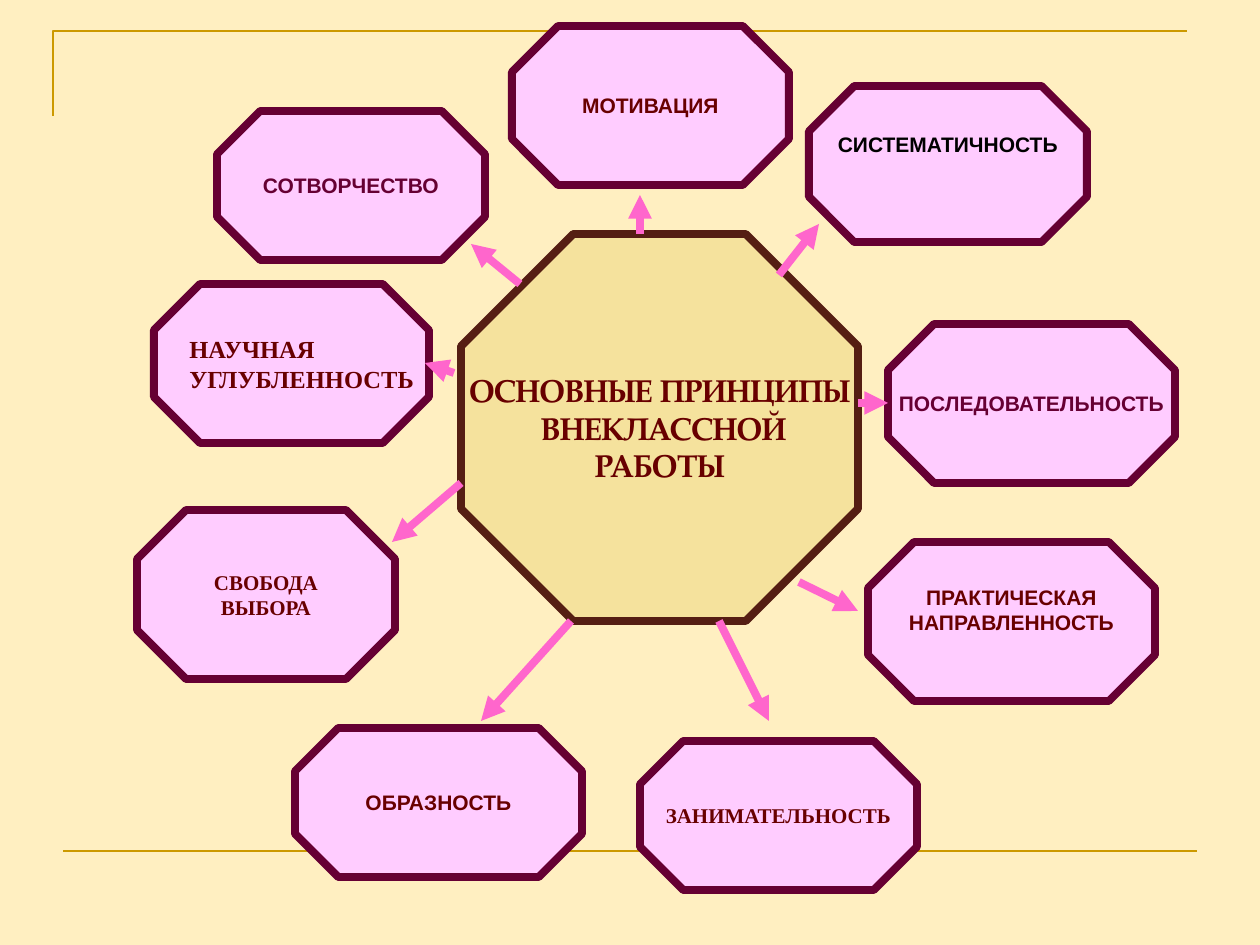
from lxml.etree import SubElement
from pptx import Presentation
from pptx.dml.color import RGBColor
from pptx.enum.shapes import MSO_CONNECTOR, MSO_SHAPE
from pptx.enum.text import MSO_ANCHOR, PP_ALIGN
from pptx.oxml.ns import qn
from pptx.util import Pt

PX = 914400 / 126
SANS, SERIF, TITLE = "Arial", "Times New Roman", "TeX Gyre Pagella"
WINE, PLUM, PINK, GOLD = "680000", "660033", "FF66CC", "CC9900"


def paint(obj, color):
    if hasattr(obj, "solid"):
        obj.solid()
        obj = obj.fore_color
    obj.rgb = RGBColor.from_string(color)


def write(shape, text, font=SANS, size=12, color=WINE, align=PP_ALIGN.CENTER, lift=0):
    frame = shape.text_frame
    frame.word_wrap = False
    frame.vertical_anchor = MSO_ANCHOR.MIDDLE
    frame.margin_bottom = round((6 + lift) * PX)
    for i, line in enumerate(text.split("\n")):
        para = frame.paragraphs[0] if i == 0 else frame.add_paragraph()
        para.alignment = align
        run = para.add_run()
        run.text = line
        run.font.name = font
        run.font.size = Pt(size)
        run.font.bold = True
        paint(run.font.color, color)


deck = Presentation()
deck.slide_width = round(1260 * PX)
deck.slide_height = round(945 * PX)
slide = deck.slides.add_slide(deck.slide_layouts[6])
paint(slide.background.fill, "FFEFC1")
shapes = slide.shapes

build = shapes.build_freeform(53, 116, scale=PX)
build.add_line_segments([(53, 31), (1187, 31)], close=False)
frame = build.convert_to_shape()
frame.shadow.inherit = False
frame.fill.background()
paint(frame.line.fill, GOLD)
frame.line.width = Pt(1.5)

nodes = [
    (461, 234, 397, 387, "ОСНОВНЫЕ ПРИНЦИПЫ\n ВНЕКЛАССНОЙ\nРАБОТЫ", dict(font=TITLE, size=18)),
    (217, 111, 268, 149, "СОТВОРЧЕСТВО", dict(color=PLUM)),
    (154, 284, 275, 159, "НАУЧНАЯ\nУГЛУБЛЕННОСТЬ", dict(font=SERIF, size=14, align=PP_ALIGN.LEFT)),
    (137, 510, 258, 169, "СВОБОДА\nВЫБОРА", dict(font=SERIF)),
    (295, 728, 287, 149, "ОБРАЗНОСТЬ", {}),
    (512, 26, 277, 159, "МОТИВАЦИЯ", {}),
    (809, 86, 278, 156, "СИСТЕМАТИЧНОСТЬ", dict(color="000000", lift=40)),
    (888, 324, 287, 159, "ПОСЛЕДОВАТЕЛЬНОСТЬ", dict(color=PLUM)),
    (868, 542, 287, 159, "ПРАКТИЧЕСКАЯ\nНАПРАВЛЕННОСТЬ", dict(lift=24)),
    (640, 741, 277, 149, "ЗАНИМАТЕЛЬНОСТЬ", dict(font=SERIF)),
]
lines = [
    (63, 851, 1197, 851),
    (571, 621, 481, 721),
    (461, 483, 392, 542),
    (719, 621, 769, 721),
    (799, 582, 858, 611),
    (454, 373, 425, 363),
    (520, 284, 471, 244),
    (858, 403, 888, 403),
    (779, 275, 819, 224),
    (640, 234, 640, 195),
]

for i, ends in enumerate(lines):
    line = shapes.add_connector(MSO_CONNECTOR.STRAIGHT, *[round(v * PX) for v in ends])
    SubElement(line._element.spPr, qn("a:effectLst"))
    paint(line.line.fill, PINK if i else GOLD)
    line.line.width = Pt(4.5 if i else 1.5)
    if i:
        SubElement(line.line._get_or_add_ln(), qn("a:tailEnd"), type="triangle")
        continue
    for j, (*box, text, style) in enumerate(nodes):
        node = shapes.add_shape(MSO_SHAPE.OCTAGON, *[round(v * PX) for v in box])
        node.adjustments[0] = 0.29
        node.shadow.inherit = False
        paint(node.fill, "FFCCFF" if j else "F5E29D")
        paint(node.line.fill, PLUM if j else "551E13")
        node.line.width = Pt(4.5)
        write(node, text, **style)

deck.save("out.pptx")
